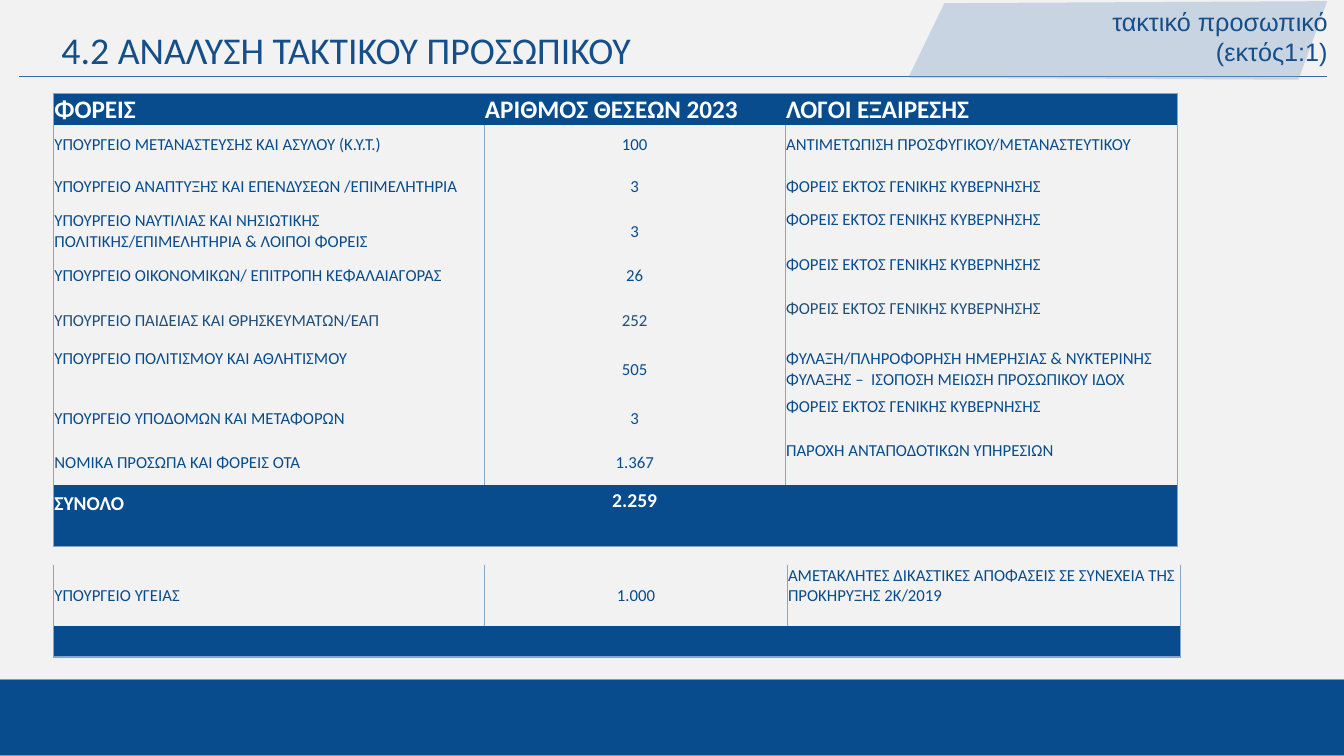
from lxml import etree
from pptx import Presentation
from pptx.dml.color import RGBColor
from pptx.enum.shapes import MSO_CONNECTOR, MSO_SHAPE
from pptx.enum.text import MSO_ANCHOR, PP_ALIGN
from pptx.oxml.ns import qn
from pptx.util import Cm, Pt

LEFT, CENTER, RIGHT = PP_ALIGN.LEFT, PP_ALIGN.CENTER, PP_ALIGN.RIGHT
TOP, MIDDLE, BOTTOM = MSO_ANCHOR.TOP, MSO_ANCHOR.MIDDLE, MSO_ANCHOR.BOTTOM
RECTANGLE, STRAIGHT = MSO_SHAPE.RECTANGLE, MSO_CONNECTOR.STRAIGHT

COLORS = {
    "background": "F2F2F2",
    "navy": "084C8D",
    "title": "144F89",
    "dark": "1F4E79",
    "border": "87A4CB",
    "band_line": "6F9DD0",
    "rule": "376A9F",
    "white": "FFFFFF",
}
PLAIN_TABLE_STYLE = "{2D5ABB26-0587-4C30-8999-92F81FD0307C}"
OUTSIDE = "ΦΟΡΕΙΣ ΕΚΤΟΣ ΓΕΝΙΚΗΣ ΚΥΒΕΡΝΗΣΗΣ"

HEADERS = ["ΦΟΡΕΙΣ", "ΑΡΙΘΜΟΣ ΘΕΣΕΩΝ 2023", "ΛΟΓΟΙ ΕΞΑΙΡΕΣΗΣ"]
TOTALS = ["ΣΥΝΟΛΟ", "2.259", ""]
# Row height, cell texts, anchor of the reason
BODIES = [
    (1.0, ["ΥΠΟΥΡΓΕΙΟ ΜΕΤΑΝΑΣΤΕΥΣΗΣ ΚΑΙ ΑΣΥΛΟΥ (Κ.Υ.Τ.)", "100",
           "ΑΝΤΙΜΕΤΩΠΙΣΗ ΠΡΟΣΦΥΓΙΚΟΥ/ΜΕΤΑΝΑΣΤΕΥΤΙΚΟΥ"], MIDDLE),
    (1.12, ["ΥΠΟΥΡΓΕΙΟ ΑΝΑΠΤΥΞΗΣ ΚΑΙ ΕΠΕΝΔΥΣΕΩΝ /ΕΠΙΜΕΛΗΤΗΡΙΑ", "3", OUTSIDE], MIDDLE),
    (1.12, ["ΥΠΟΥΡΓΕΙΟ ΝΑΥΤΙΛΙΑΣ ΚΑΙ ΝΗΣΙΩΤΙΚΗΣ "
            "ΠΟΛΙΤΙΚΗΣ/ΕΠΙΜΕΛΗΤΗΡΙΑ & ΛΟΙΠΟΙ ΦΟΡΕΙΣ", "3", OUTSIDE], TOP),
    (1.12, ["ΥΠΟΥΡΓΕΙΟ ΟΙΚΟΝΟΜΙΚΩΝ/ ΕΠΙΤΡΟΠΗ ΚΕΦΑΛΑΙΑΓΟΡΑΣ", "26", OUTSIDE], TOP),
    (1.12, ["ΥΠΟΥΡΓΕΙΟ ΠΑΙΔΕΙΑΣ ΚΑΙ ΘΡΗΣΚΕΥΜΑΤΩΝ/ΕΑΠ", "252", OUTSIDE], TOP),
    (1.35, ["ΥΠΟΥΡΓΕΙΟ ΠΟΛΙΤΙΣΜΟΥ ΚΑΙ ΑΘΛΗΤΙΣΜΟΥ", "505",
            "ΦΥΛΑΞΗ/ΠΛΗΡΟΦΟΡΗΣΗ ΗΜΕΡΗΣΙΑΣ & ΝΥΚΤΕΡΙΝΗΣ "
            "ΦΥΛΑΞΗΣ –  ΙΣΟΠΟΣΗ ΜΕΙΩΣΗ ΠΡΟΣΩΠΙΚΟΥ ΙΔΟΧ"], MIDDLE),
    (1.12, ["ΥΠΟΥΡΓΕΙΟ ΥΠΟΔΟΜΩΝ ΚΑΙ ΜΕΤΑΦΟΡΩΝ", "3", OUTSIDE], TOP),
    (1.12, ["ΝΟΜΙΚΑ ΠΡΟΣΩΠΑ ΚΑΙ ΦΟΡΕΙΣ ΟΤΑ", "1.367", "ΠΑΡΟΧΗ ΑΝΤΑΠΟΔΟΤΙΚΩΝ ΥΠΗΡΕΣΙΩΝ"], TOP),
]
HEALTH = ["ΥΠΟΥΡΓΕΙΟ ΥΓΕΙΑΣ", "1.000",
          "ΑΜΕΤΑΚΛΗΤΕΣ ΔΙΚΑΣΤΙΚΕΣ ΑΠΟΦΑΣΕΙΣ ΣΕ ΣΥΝΕΧΕΙΑ ΤΗΣ ΠΡΟΚΗΡΥΞΗΣ 2Κ/2019"]


def rgb(name):
    return RGBColor.from_string(COLORS[name])


def write_text(text_frame, text, size=12, color="navy", font="Calibri", bold=False,
               align=LEFT, line_spacing=None):
    paragraph = text_frame.paragraphs[0]
    paragraph.alignment = align
    paragraph.line_spacing = line_spacing
    run = paragraph.add_run()
    run.text = text
    run.font.size = Pt(size)
    run.font.name = font
    run.font.bold = bold
    run.font.color.rgb = rgb(color)


def add_text_box(slide, box, text, inset, **text_format):
    text_frame = slide.shapes.add_textbox(*map(Cm, box)).text_frame
    text_frame.word_wrap = True
    text_frame.margin_left = text_frame.margin_right = Cm(inset)
    write_text(text_frame, text, **text_format)


def add_footer_band(slide):
    band = slide.shapes.add_shape(RECTANGLE, Cm(-0.05), Cm(17.12), Cm(33.96), Cm(1.93))
    band.shadow.inherit = False
    band.fill.solid()
    band.fill.fore_color.rgb = rgb("navy")
    band.line.color.rgb = rgb("band_line")
    band.line.width = Pt(1)


def add_title_rule(slide):
    rule = slide.shapes.add_connector(STRAIGHT, Cm(0.48), Cm(1.93), Cm(33.45), Cm(1.93))
    rule.line.color.rgb = rgb("rule")
    rule.line.width = Pt(0.5)
    etree.SubElement(rule._element.spPr, qn("a:effectLst"))


def add_corner_tab(slide):
    corners = [(Cm(x), Cm(y)) for x, y in
               [(32.72, 2.01), (22.89, 1.96), (23.8, 0.08), (33.45, 0.03)]]
    builder = slide.shapes.build_freeform(*corners[0])
    builder.add_line_segments(corners[1:], close=True)
    tab = builder.convert_to_shape()
    tab.shadow.inherit = False
    tab.line.fill.background()
    tab.fill.solid()
    tab.fill.fore_color.rgb = rgb("border")
    color = tab._element.spPr.find(f"{qn('a:solidFill')}/{qn('a:srgbClr')}")
    etree.SubElement(color, qn("a:alpha"), val="38000")


def set_borders(cell, sides):
    """Draw the sides named by letters, given in the order L, R, T, B."""
    properties = cell._tc.get_or_add_tcPr()
    for side in sides:
        line = etree.SubElement(properties, qn(f"a:ln{side}"), w=str(Pt(1)))
        fill = etree.SubElement(line, qn("a:solidFill"))
        etree.SubElement(fill, qn("a:srgbClr"), val=COLORS["border"])


def add_plain_table(slide, left, top, widths, heights):
    frame = slide.shapes.add_table(len(heights), len(widths), Cm(left), Cm(top),
                                   Cm(sum(widths)), Cm(sum(heights)))
    table = frame.table
    table.first_row = table.horz_banding = False
    table._tbl.tblPr.find(qn("a:tableStyleId")).text = PLAIN_TABLE_STYLE
    for column, width in zip(table.columns, widths):
        column.width = Cm(width)
    for row, height in zip(table.rows, heights):
        row.height = Cm(height)
    return table


def fill_cell(cell, text, sides, anchor=MIDDLE, filled=False, margin_top=0.02, **text_format):
    set_borders(cell, sides)
    if filled:
        cell.fill.solid()
        cell.fill.fore_color.rgb = rgb("navy")
    cell.margin_left = cell.margin_right = Cm(0.02)
    cell.margin_top, cell.margin_bottom = Cm(margin_top), Cm(0)
    cell.vertical_anchor = anchor
    write_text(cell.text_frame, text, **text_format)


def fill_band_row(row, texts, edge="", **cell_format):
    """Fill a navy row; edge is T or B for a line along that side."""
    for cell, text, side, align in zip(row.cells, texts, ["L", "", "R"], [LEFT, CENTER, LEFT]):
        fill_cell(cell, text, side + edge, filled=True, color="white", bold=True,
                  align=align, **cell_format)


def fill_body_row(row, texts, reason_anchor, color="navy"):
    anchors = [MIDDLE, MIDDLE, reason_anchor]
    for cell, text, anchor, align in zip(row.cells, texts, anchors, [LEFT, CENTER, LEFT]):
        fill_cell(cell, text, "LR", anchor=anchor, color=color, align=align)


def add_positions_table(slide):
    heights = [0.78] + [height for height, _, _ in BODIES] + [0.75, 0.75]
    table = add_plain_table(slide, 1.35, 2.36, [10.85, 7.59, 9.88], heights)
    rows = list(table.rows)
    fill_band_row(rows[0], HEADERS, "T", anchor=BOTTOM, size=18)
    table.cell(0, 1).text_frame.paragraphs[0].alignment = LEFT
    for row, (_, texts, anchor) in zip(rows[1:], BODIES):
        fill_body_row(row, texts, anchor, "dark" if "ΕΑΠ" in texts[0] else "navy")
    culture = table.cell(6, 0)
    culture.vertical_anchor = TOP
    culture.margin_top = Cm(0.17)
    fill_band_row(rows[-2], TOTALS, size=14)
    table.cell(len(rows) - 2, 0).vertical_anchor = BOTTOM
    fill_band_row(rows[-1], [""] * 3, "B")


def add_health_table(slide):
    table = add_plain_table(slide, 1.35, 14.23, [10.87, 7.62, 9.91], [1.54, 0.76])
    fill_body_row(table.rows[0], HEALTH, TOP)
    fill_band_row(table.rows[1], [""] * 3, "B")


def main():
    presentation = Presentation()
    presentation.slide_width, presentation.slide_height = Cm(33.87), Cm(19.05)
    slide = presentation.slides.add_slide(presentation.slide_layouts[6])
    slide.background.fill.solid()
    slide.background.fill.fore_color.rgb = rgb("background")

    add_footer_band(slide)
    add_title_rule(slide)
    add_text_box(slide, (1.42, 0.76, 32.49, 1.17), "4.2 ΑΝΑΛΥΣΗ ΤΑΚΤΙΚΟΥ ΠΡΟΣΩΠΙΚΟΥ", 0.13,
                 size=27, color="title", line_spacing=0.8)
    add_corner_tab(slide)
    add_text_box(slide, (25.53, 0.03, 8.18, 1.8), "τακτικό προσωπικό (εκτός1:1)", 0.25,
                 size=18, color="title", font="Arial", align=RIGHT)
    add_positions_table(slide)
    add_health_table(slide)
    presentation.save("out.pptx")


if __name__ == "__main__":
    main()
